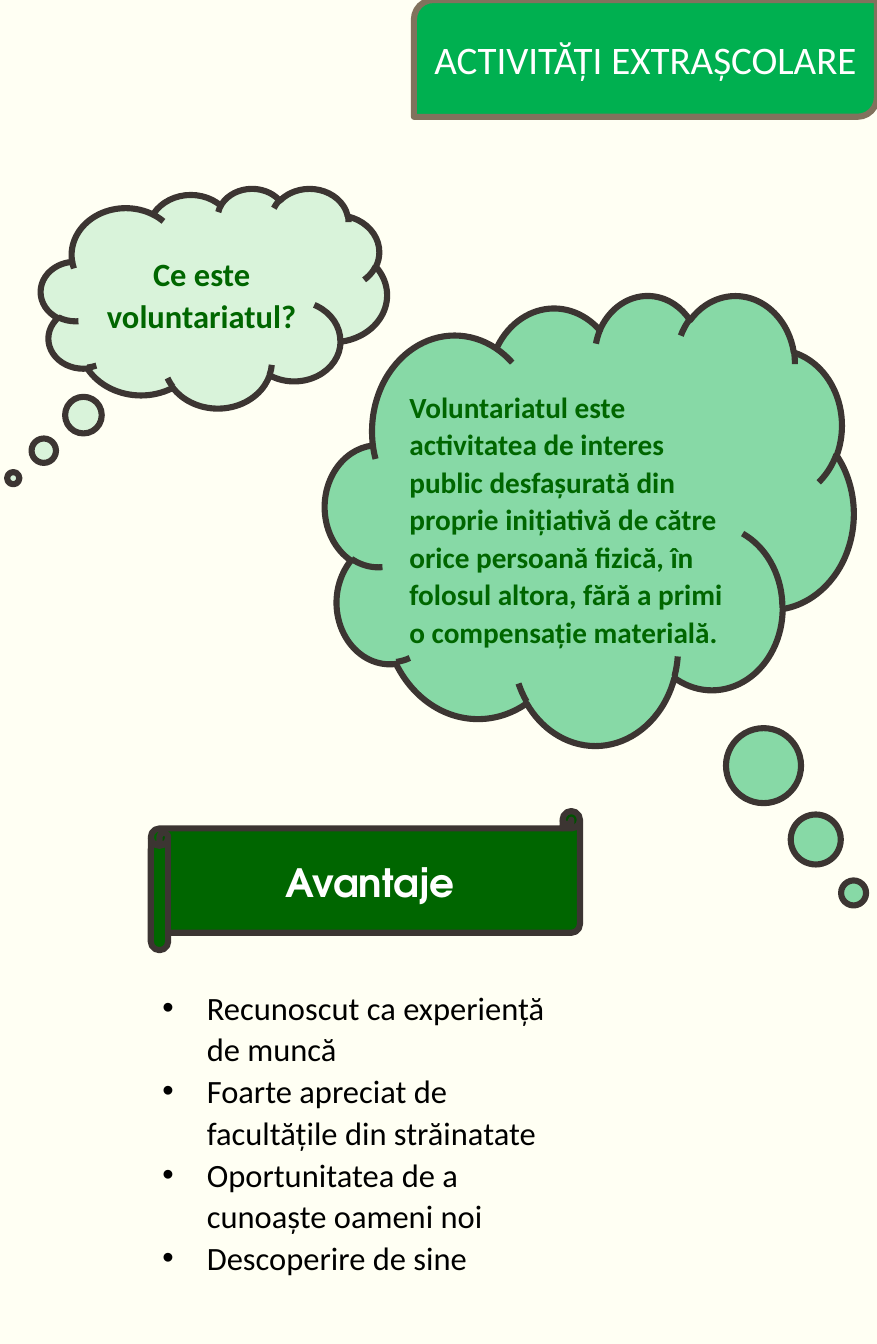
from lxml.etree import SubElement
from pptx import Presentation
from pptx.dml.color import RGBColor
from pptx.enum.shapes import MSO_SHAPE
from pptx.enum.text import MSO_ANCHOR, MSO_AUTO_SIZE, PP_ALIGN
from pptx.oxml.ns import qn
from pptx.util import Pt

# Scale: 100 px to the inch
PX = 9144
PAGE_WIDTH, PAGE_HEIGHT = 750, 1150

CREAM = RGBColor(0xFF, 0xFF, 0xF3)
GREEN = RGBColor(0x00, 0xB0, 0x50)
DARK_GREEN = RGBColor(0x00, 0x66, 0x00)
BROWN = RGBColor(0x3C, 0x35, 0x32)
TAUPE = RGBColor(0x81, 0x72, 0x5D)
WHITE = RGBColor(0xFF, 0xFF, 0xFF)
BLACK = RGBColor(0x00, 0x00, 0x00)

BODY_FONT = "Calibri"
HEADING_FONT = "TeX Gyre Adventor"
LINE_SPACING = 1.07
BULLET_INDENT = 38

TITLE = "ACTIVITĂȚI EXTRAȘCOLARE"
QUESTION = "Ce este voluntariatul?"
DEFINITION = (
    "Voluntariatul este activitatea de interes public desfașurată din "
    "proprie inițiativă de către orice persoană fizică, în folosul altora, "
    "fără a primi o compensație materială."
)
ADVANTAGES = [
    "Recunoscut ca experiență de muncă",
    "Foarte apreciat de facultățile din străinatate",
    "Oportunitatea de a cunoaște oameni noi",
    "Descoperire de sine",
]


def set_values(target, values):
    for name, value in values.items():
        setattr(target, name, value)


def emu(box):
    return [length * PX for length in box]


def add_outlined(page, kind, box, fill, line, opacity=100):
    """Add a preset shape with a heavy outline and an optional tint."""
    shape = page.shapes.add_shape(kind, *emu(box))
    shape.shadow.inherit = False
    shape.fill.solid()
    shape.fill.fore_color.rgb = fill
    shape.line.color.rgb = line
    shape.line.width = Pt(3.78)
    if opacity < 100:
        colour = shape.fill._xPr.find(qn("a:solidFill"))[0]
        SubElement(colour, qn("a:alpha"), val=str(opacity * 1000))
    return shape


def write(shape, lines, font, colour, frame_values=None, para_values=None):
    """Fill the shape with one paragraph for each line."""
    frame = shape.text_frame
    set_values(frame, {
        "word_wrap": True,
        "auto_size": MSO_AUTO_SIZE.NONE,
        "vertical_anchor": MSO_ANCHOR.MIDDLE,
        **(frame_values or {}),
    })
    for index, line in enumerate(lines):
        para = frame.add_paragraph() if index else frame.paragraphs[0]
        set_values(para, {
            "alignment": PP_ALIGN.CENTER,
            "line_spacing": LINE_SPACING,
            **(para_values or {}),
        })
        span = para.add_run()
        span.text = line
        set_values(span.font, {"name": BODY_FONT, **font})
        span.font.color.rgb = colour
    return frame.paragraphs


def add_header(page, box):
    add_outlined(page, MSO_SHAPE.ROUND_2_DIAG_RECTANGLE, box, GREEN, TAUPE)
    title = page.shapes.title
    set_values(title, dict(zip(("left", "top", "width", "height"), emu(box))))
    write(title, [TITLE], {"size": Pt(24), "bold": False}, WHITE,
          {"margin_left": 0, "margin_right": 0}, {"line_spacing": 1.0})
    # Bring the title in front of its panel
    page.shapes._spTree.append(title._element)


def add_thought(page, box, tail, opacity, text, size, frame_values, para_values):
    cloud = add_outlined(page, MSO_SHAPE.CLOUD_CALLOUT, box, GREEN, BROWN, opacity)
    for index, offset in enumerate(tail):
        cloud.adjustments[index] = offset
    write(cloud, [text], {"size": Pt(size), "bold": True}, DARK_GREEN,
          frame_values, para_values)


def add_banner(page, box):
    scroll = add_outlined(page, MSO_SHAPE.HORIZONTAL_SCROLL, box, DARK_GREEN, BROWN)
    write(scroll, ["Avantaje"],
          {"name": HEADING_FONT, "size": Pt(24), "bold": True}, WHITE,
          para_values={"space_after": Pt(8)})


def add_advantages(page, box):
    listing = page.shapes.add_textbox(*emu(box))
    paras = write(listing, ADVANTAGES, {"size": Pt(20)}, BLACK,
                  {"vertical_anchor": MSO_ANCHOR.TOP},
                  {"alignment": PP_ALIGN.LEFT})
    for para in paras:
        properties = para._p.get_or_add_pPr()
        properties.set("marL", str(BULLET_INDENT * PX))
        properties.set("indent", str(-BULLET_INDENT * PX))
        SubElement(properties, qn("a:buFont"), typeface="Arial")
        SubElement(properties, qn("a:buChar"), char="•")


def main():
    deck = Presentation()
    deck.slide_width = PAGE_WIDTH * PX
    deck.slide_height = PAGE_HEIGHT * PX
    page = deck.slides.add_slide(deck.slide_layouts[5])
    page.background.fill.solid()
    page.background.fill.fore_color.rgb = CREAM

    # Question, header and answer
    add_thought(page, (35, 161, 296, 188), (-0.58, 0.82), 15, QUESTION, 20,
                {}, {"space_after": Pt(8)})
    add_header(page, (354, 0, 396, 100))
    add_thought(page, (278, 252, 452, 385), (0.5, 0.83), 47, DEFINITION, 18,
                {"margin_top": 20 * PX}, {"alignment": PP_ALIGN.LEFT})

    # Advantages
    add_banner(page, (129, 694, 367, 119))
    add_advantages(page, (129, 838, 378, 298))

    deck.save("out.pptx")


if __name__ == "__main__":
    main()
